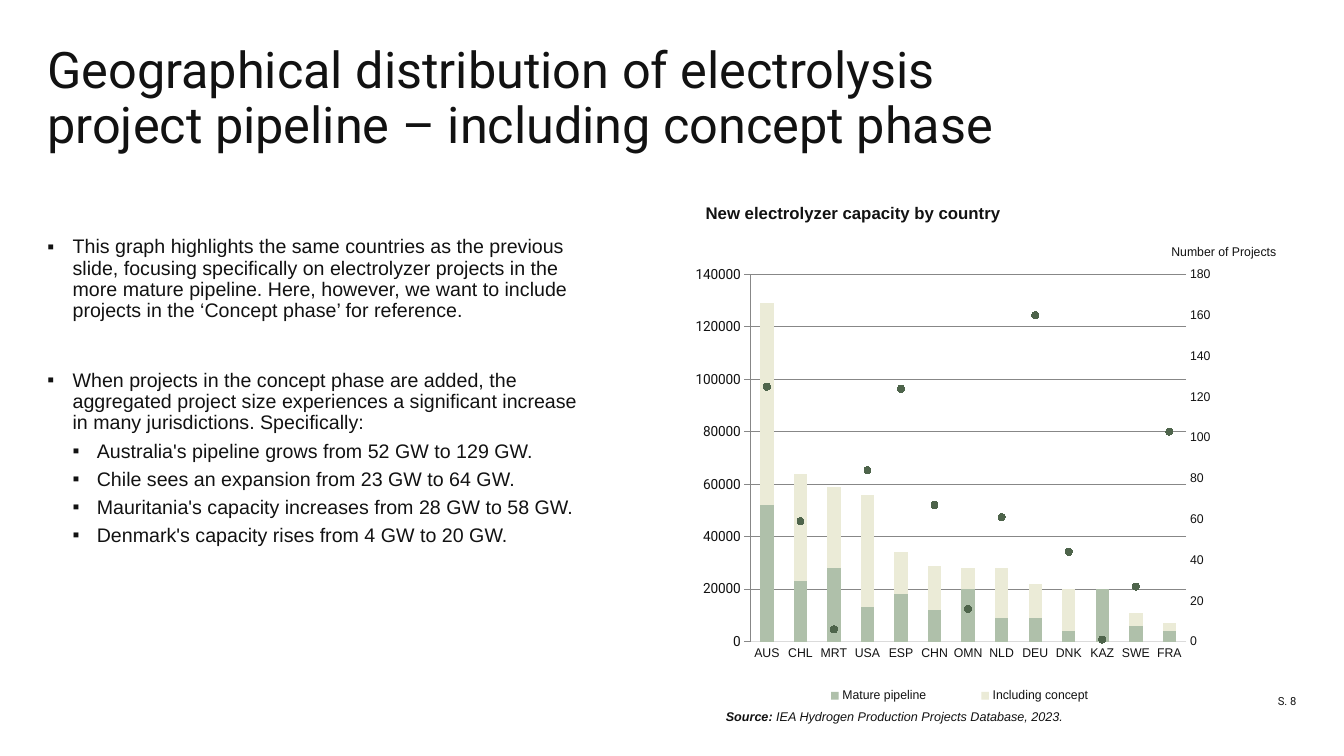
from dataclasses import dataclass

from lxml import etree
from pptx import Presentation
from pptx.chart.axis import ValueAxis
from pptx.chart.chart import Chart
from pptx.chart.data import CategoryChartData
from pptx.dml.color import RGBColor
from pptx.enum.chart import (XL_CHART_TYPE, XL_LEGEND_POSITION,
                             XL_MARKER_STYLE, XL_TICK_MARK)
from pptx.enum.text import MSO_ANCHOR, PP_ALIGN
from pptx.oxml import parse_xml
from pptx.oxml.ns import nsdecls, qn
from pptx.slide import Slide
from pptx.text.text import Font, TextFrame
from pptx.util import Inches, Pt

INK, GRID = "121212", "DBDBDB"
BODY, HEAD = "Arial", "Roboto"
CODES = "AUS CHL MRT USA ESP CHN OMN NLD DEU DNK KAZ SWE FRA".split()


@dataclass
class Series:
    name: str
    color: str
    vals: list[int]


@dataclass
class Bullet:
    text: str
    left: float
    hang: float
    gap: float


DATA = [
    Series("Mature pipeline", "AFC0AA",
           [52000, 23000, 28000, 13000, 18000, 12000, 20000, 9000, 9000,
            4000, 20000, 6000, 4000]),
    Series("Including concept", "EBEBD7",
           [77000, 41000, 31000, 43000, 16000, 17000, 8000, 19000, 13000,
            16000, 0, 5000, 3000]),
    Series("Number of Projects", "4E644B",
           [125, 59, 6, 84, 124, 67, 16, 61, 160, 44, 1, 27, 103]),
]
MAIN = [
    Bullet("This graph highlights the same countries as the previous slide, "
           "focusing specifically on electrolyzer projects in the more mature "
           "pipeline. Here, however, we want to include projects in the "
           "‘Concept phase’ for reference.", 0.25, 0.25, 0),
    Bullet("When projects in the concept phase are added, the aggregated "
           "project size experiences a significant increase in many "
           "jurisdictions. Specifically:", 0.25, 0.25, 35),
]
GROWTH = [
    "Australia's pipeline grows from 52 GW to 129 GW.",
    "Chile sees an expansion from 23 GW to 64 GW.",
    "Mauritania's capacity increases from 28 GW to 58 GW.",
    "Denmark's capacity rises from 4 GW to 20 GW.",
]
LINE_XML = f"""<c:lineChart {nsdecls("c")}><c:grouping val="standard"/>
<c:varyColors val="0"/><c:marker val="1"/>
<c:axId val="301"/><c:axId val="302"/></c:lineChart>"""
CAT_XML = f"""<c:catAx {nsdecls("c")}><c:axId val="301"/>
<c:scaling><c:orientation val="minMax"/></c:scaling><c:delete val="1"/>
<c:axPos val="b"/><c:crossAx val="302"/><c:crosses val="autoZero"/></c:catAx>"""
VAL_XML = f"""<c:valAx {nsdecls("c")}><c:axId val="302"/>
<c:scaling><c:orientation val="minMax"/></c:scaling><c:delete val="0"/>
<c:axPos val="r"/><c:majorTickMark val="out"/><c:minorTickMark val="none"/>
<c:tickLblPos val="nextTo"/><c:crossAx val="301"/><c:crosses val="max"/></c:valAx>"""


def paint(hue: str) -> RGBColor:
    return RGBColor.from_string(hue)


def style(font: Font, size: float, face: str = BODY, bold: bool = False) -> None:
    font.size, font.name, font.bold = Pt(size), face, bold
    font.color.rgb = paint(INK)


def add_box(slide: Slide, left: float, top: float, width: float,
            height: float, inset: bool = False) -> TextFrame:
    frame = slide.shapes.add_textbox(Inches(left), Inches(top), Inches(width),
                                     Inches(height)).text_frame
    frame.word_wrap = True
    if not inset:
        frame.margin_left = frame.margin_right = 0
        frame.margin_top = frame.margin_bottom = 0
    return frame


def add_list(frame: TextFrame, items: list[Bullet]) -> None:
    for i, item in enumerate(items):
        para = frame.add_paragraph() if i else frame.paragraphs[0]
        para.text = item.text
        para.line_spacing, para.space_before = 0.9, Pt(item.gap)
        props = para._p.get_or_add_pPr()
        props.set("marL", str(Inches(item.left)))
        props.set("indent", str(-Inches(item.hang)))
        etree.SubElement(props, qn("a:buFont"), typeface=BODY)
        etree.SubElement(props, qn("a:buChar"), char="▪")
        style(para.font, 14)


def place(host: etree._Element, after: str, **parts: float | str) -> None:
    """Give a chart part a manual layout, following the named child."""
    layout = host.find(qn("c:layout"))
    if layout is None:
        layout = etree.Element(qn("c:layout"))
        prior = host.find(qn(after)) if after else None
        if prior is None:
            host.insert(0, layout)
        else:
            prior.addnext(layout)
    manual = etree.SubElement(layout, qn("c:manualLayout"))
    for key, val in parts.items():
        etree.SubElement(manual, qn(f"c:{key}"), val=str(val))


def set_axis(axis: ValueAxis, name: str, top: int, step: int, form: str,
             left: float) -> None:
    axis.minimum_scale, axis.maximum_scale, axis.major_unit = 0, top, step
    axis.format.line.fill.background()
    style(axis.tick_labels.font, 9)
    axis.tick_labels.number_format = form
    axis.tick_labels.number_format_is_linked = False
    title = axis.axis_title
    frame = title.text_frame
    frame.text = name
    style(frame.paragraphs[0].font, 9)
    body = frame._txBody.find(qn("a:bodyPr"))
    body.set("rot", "0")
    body.set("vert", "horz")
    place(title._element, "c:tx", xMode="edge", yMode="edge", x=left, y=0.01)


def split_line(chart: Chart) -> ValueAxis:
    """Move the last series to a line plot with its own right axis."""
    area = chart._chartSpace.chart.plotArea
    bars = area.find(qn("c:barChart"))
    last = bars.findall(qn("c:ser"))[-1]
    for flag in last.findall(qn("c:invertIfNegative")):
        last.remove(flag)
    line = parse_xml(LINE_XML)
    line.find(qn("c:varyColors")).addnext(last)
    bars.addnext(line)
    right = parse_xml(VAL_XML)
    area.find(qn("c:valAx")).addnext(right)
    right.addnext(parse_xml(CAT_XML))
    return ValueAxis(right)


def add_graph(slide: Slide) -> None:
    data = CategoryChartData()
    data.categories = CODES
    for item in DATA:
        data.add_series(item.name, item.vals)
    chart = slide.shapes.add_chart(
        XL_CHART_TYPE.COLUMN_STACKED, Inches(6.9), Inches(2.35), Inches(5.78),
        Inches(4.67), data).chart
    style(chart.font, 10, HEAD)
    chart.has_title = False
    right = split_line(chart)

    bars, dots = chart.plots
    bars.gap_width, bars.overlap, bars.vary_by_categories = 150, 100, False
    for ser, item in zip(bars.series, DATA):
        ser.format.fill.solid()
        ser.format.fill.fore_color.rgb = paint(item.color)
    ser = dots.series[0]
    ser.smooth = False
    ser.format.line.fill.background()
    mark = ser.marker
    mark.style, mark.size = XL_MARKER_STYLE.CIRCLE, 5
    mark.format.fill.solid()
    mark.format.fill.fore_color.rgb = paint(DATA[-1].color)
    mark.format.line.color.rgb = paint(DATA[-1].color)

    base, left = chart.category_axis, chart.value_axis
    base.major_tick_mark = left.major_tick_mark = XL_TICK_MARK.NONE
    style(base.tick_labels.font, 9)
    left.has_major_gridlines = True
    for line in (base.format.line, left.major_gridlines.format.line):
        line.color.rgb, line.width = paint(GRID), Pt(0.75)
    set_axis(left, "MW", 140000, 20000,
             '_-* #,##0_-;\\-* #,##0_-;_-* "-"??_-;_-@_', 0.01)
    set_axis(right, "Number of Projects", 180, 20, "General", 0.83)

    chart.has_legend = True
    key = chart.legend
    key.position, key.include_in_layout = XL_LEGEND_POSITION.BOTTOM, False
    style(key.font, 9)
    place(key._element, "c:legendPos", xMode="edge", yMode="edge",
          x=0.18, y=0.95, w=0.56, h=0.05)
    place(chart._chartSpace.chart.plotArea, "", layoutTarget="inner",
          xMode="edge", yMode="edge", x=0.09, y=0.08, w=0.77, h=0.78)


def main() -> None:
    deck = Presentation()
    deck.slide_width, deck.slide_height = Inches(13.33), Inches(7.5)
    slide = deck.slides.add_slide(deck.slide_layouts[6])

    title = add_box(slide, 0.47, 0.47, 10.39, 1.06)
    title.vertical_anchor = MSO_ANCHOR.BOTTOM
    para = title.paragraphs[0]
    para.text = ("Geographical distribution of electrolysis project pipeline "
                 "– including concept phase")
    para.line_spacing = 0.9
    style(para.font, 36, HEAD)

    subs = [Bullet(text, 0.49, 0.24, 5) for text in GROWTH]
    add_list(add_box(slide, 0.47, 2.35, 5.31, 3.32), MAIN + subs)

    page = add_box(slide, 11.83, 6.63, 1.03, 0.39)
    page.vertical_anchor = MSO_ANCHOR.BOTTOM
    para = page.paragraphs[0]
    para.text, para.alignment = "S. 8", PP_ALIGN.RIGHT
    style(para.font, 8, HEAD)

    add_graph(slide)

    para = add_box(slide, 7.1, 6.98, 3.61, 0.25, True).paragraphs[0]
    style(para.font, 9)
    para.font.italic = True
    run = para.add_run()
    run.text, run.font.bold = "Source:", True
    para.add_run().text = " IEA Hydrogen Production Projects Database, 2023."

    para = add_box(slide, 6.9, 1.96, 6.66, 0.3, True).paragraphs[0]
    para.text = "New electrolyzer capacity by country"
    style(para.font, 12, bold=True)

    deck.save("out.pptx")


if __name__ == "__main__":
    main()
